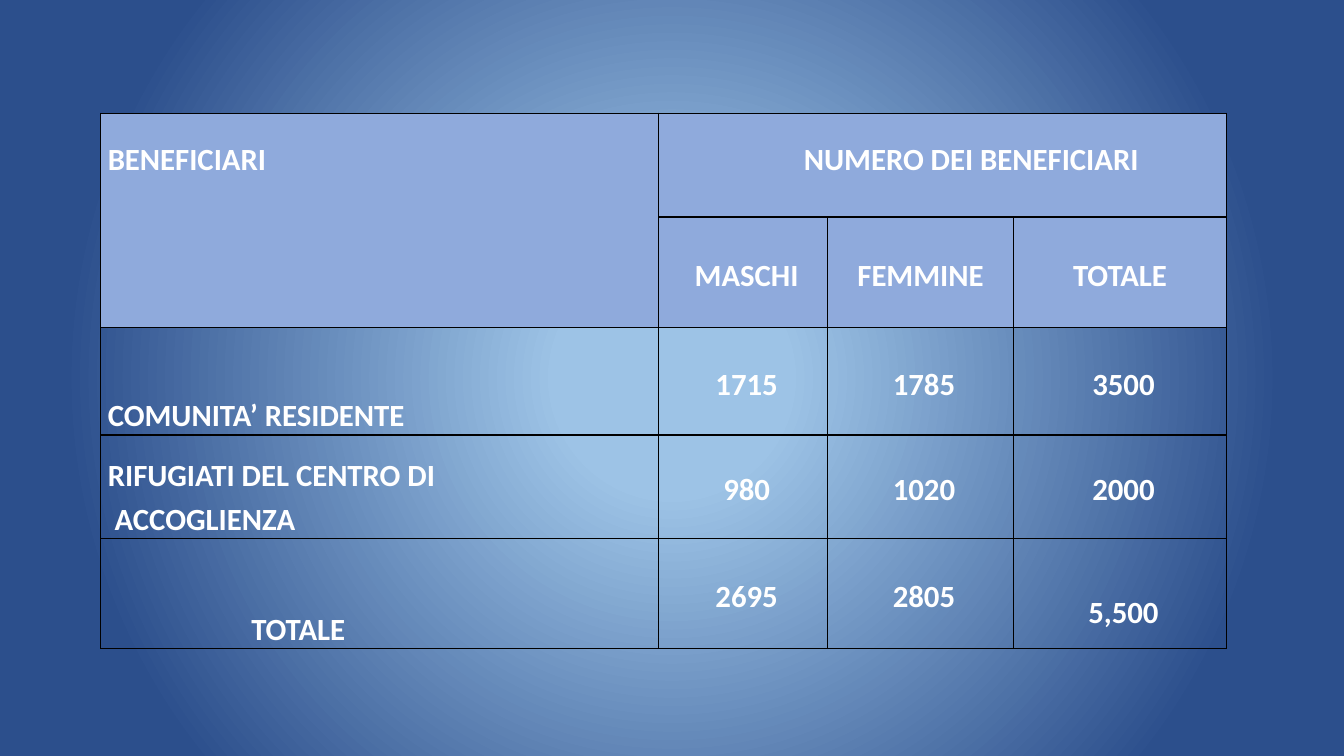
from dataclasses import dataclass

from lxml.etree import SubElement
from pptx import Presentation
from pptx.dml.color import RGBColor
from pptx.enum.text import MSO_ANCHOR, PP_ALIGN
from pptx.oxml.ns import qn
from pptx.util import Pt


@dataclass(frozen=True)
class Theme:
    font: str = "Calibri"
    text_size: float = 22
    tight_line: float = 15.7
    full_line: float = 26.85
    text: str = "FFFFFF"
    border: str = "000000"
    header: str = "8FAADC"
    glow: str = "9DC3E6"
    edge: str = "2C4F8C"


class SlideBuilder:
    def __init__(self, deck, theme):
        self.theme = theme
        self.slide = deck.slides.add_slide(deck.slide_layouts[6])

    def radial_background(self):
        fill = self.slide.background.fill
        fill.gradient()
        stops = ((0.15, self.theme.glow), (0.79, self.theme.edge))
        for stop, (position, color) in zip(fill.gradient_stops, stops):
            stop.position = position
            stop.color.rgb = RGBColor.from_string(color)
        gradient = self.slide.element.find(".//" + qn("a:gradFill"))
        gradient.remove(gradient.find(qn("a:lin")))
        circle = SubElement(gradient, qn("a:path"), {"path": "circle"})
        SubElement(circle, qn("a:fillToRect"), dict.fromkeys("ltrb", "50000"))

    def table(self, left, top, widths, heights):
        frame = self.slide.shapes.add_table(
            len(heights), len(widths), Pt(left), Pt(top),
            Pt(sum(widths)), Pt(sum(heights)))
        grid = frame.table
        grid.first_row = grid.horz_banding = False
        for column, width in zip(grid.columns, widths):
            column.width = Pt(width)
        for row, height in zip(grid.rows, heights):
            row.height = Pt(height)
        return grid

    def frame_cell(self, cell, color=None):
        properties = cell._tc.get_or_add_tcPr()
        for side in ("lnL", "lnR", "lnT", "lnB"):
            line = SubElement(properties, qn("a:" + side), w=str(Pt(1)))
            solid = SubElement(line, qn("a:solidFill"))
            SubElement(solid, qn("a:srgbClr"), val=self.theme.border)
        if color:
            cell.fill.solid()
            cell.fill.fore_color.rgb = RGBColor.from_string(color)
        else:
            cell.fill.background()

    def cell_text(self, cell, lines, anchor=MSO_ANCHOR.MIDDLE,
                  align=PP_ALIGN.CENTER, left=5, top=0, tight=True):
        theme = self.theme
        cell.vertical_anchor = anchor
        cell.margin_left, cell.margin_top = Pt(left), Pt(top)
        cell.margin_right = cell.margin_bottom = 0
        frame = cell.text_frame
        for index, line in enumerate(lines):
            paragraph = frame.add_paragraph() if index else frame.paragraphs[0]
            paragraph.alignment = align
            if tight:
                paragraph.line_spacing = Pt(theme.tight_line)
            if index:
                paragraph.space_before = Pt(theme.tight_line)
            run = paragraph.add_run()
            run.text = line
            run.font.name, run.font.size = theme.font, Pt(theme.text_size)
            run.font.bold = True
            run.font.color.rgb = RGBColor.from_string(theme.text)


def main():
    deck = Presentation()
    deck.slide_width, deck.slide_height = Pt(960), Pt(540)
    theme = Theme()
    builder = SlideBuilder(deck, theme)
    builder.radial_background()

    # Grid: two header rows, three data rows
    beneficiaries = builder.table(
        72, 80.8, (398.6, 120.5, 133, 152), (74.2, 79.2, 76.5, 74.2, 78.5))
    for row_index, row in enumerate(beneficiaries.rows):
        for cell in row.cells:
            builder.frame_cell(cell, theme.header if row_index < 2 else None)
    cell = beneficiaries.cell
    cell(0, 0).merge(cell(1, 0))
    cell(0, 1).merge(cell(0, 3))

    # Headers
    line = theme.tight_line
    builder.cell_text(cell(0, 0), ["BENEFICIARI"], MSO_ANCHOR.TOP,
                      PP_ALIGN.LEFT, top=2 * line)
    builder.cell_text(cell(0, 1), ["NUMERO DEI BENEFICIARI "], MSO_ANCHOR.TOP,
                      left=46, top=2 * line)
    for column, heading in enumerate(("MASCHI", "FEMMINE ", "TOTALE "), 1):
        builder.cell_text(cell(1, column), [heading], top=line)

    # Groups and their counts
    groups = (
        (["COMUNITA’ RESIDENTE"], ("1715", "1785", "3500")),
        (["RIFUGIATI DEL CENTRO DI", " ACCOGLIENZA"], ("980", "1020", "2000")),
        (["TOTALE"], ("2695", "2805", "5,500")),
    )
    for row, (group, counts) in enumerate(groups, 2):
        is_total = row == 4
        builder.cell_text(cell(row, 0), group, MSO_ANCHOR.BOTTOM,
                          PP_ALIGN.LEFT, left=107.5 if is_total else 5,
                          tight=not is_total)
        for column, count in enumerate(counts, 1):
            tight = not (is_total and column == 3)
            builder.cell_text(cell(row, column), [count], tight=tight,
                              top=line if tight else theme.full_line)

    deck.save("out.pptx")


if __name__ == "__main__":
    main()
